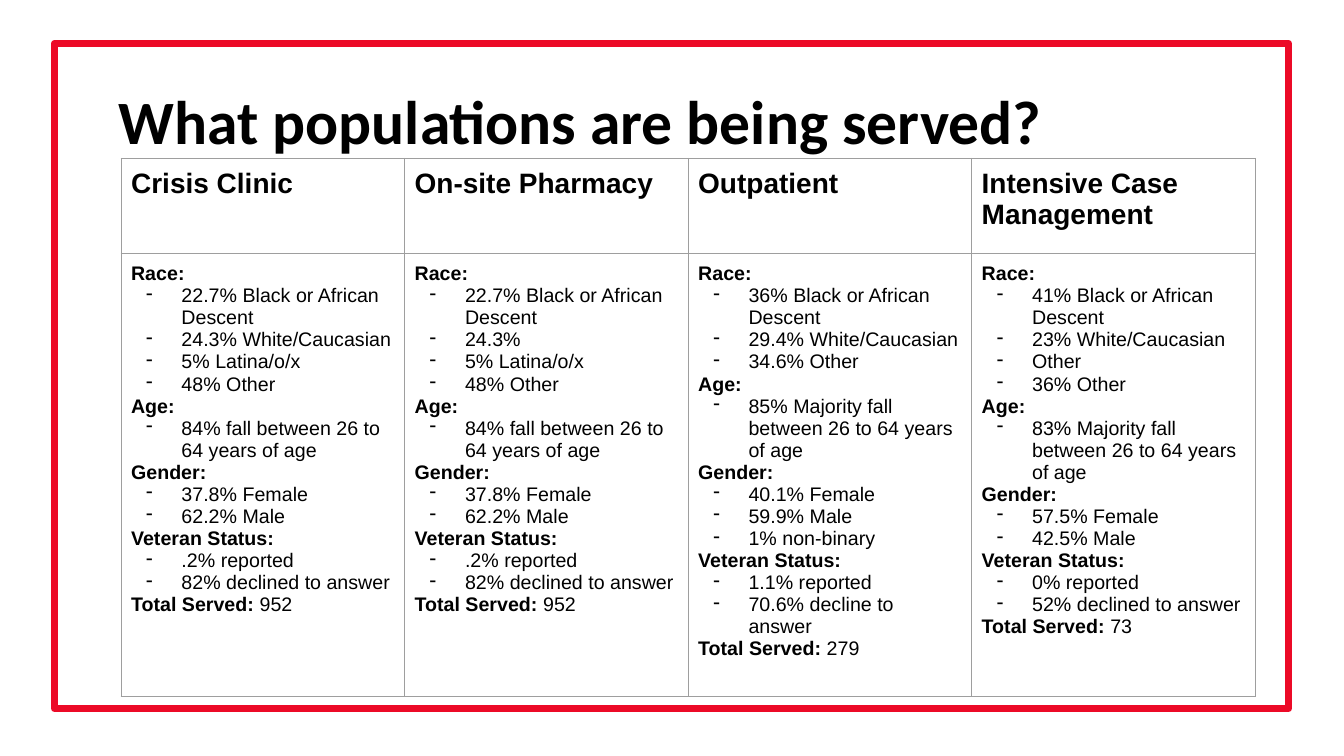
from dataclasses import dataclass

from lxml import etree
from pptx import Presentation
from pptx.dml.color import RGBColor
from pptx.enum.shapes import MSO_SHAPE
from pptx.enum.text import MSO_ANCHOR
from pptx.oxml.ns import qn
from pptx.util import Inches, Pt


@dataclass(frozen=True)
class Theme:
    text: str = "000000"
    frame: str = "EC0A27"
    grid: str = "9E9E9E"
    title_font: str = "Calibri"
    body_font: str = "Arial"
    title_size: float = 44
    header_size: float = 20
    body_size: float = 14
    frame_width: float = 5
    grid_width: float = 0.75


def clinic_facts(race, age, gender, veteran):
    return {"Race:": race, "Age:": [age], "Gender:": gender, "Veteran Status:": veteran}


def shared_facts(white_share):
    """Figures that the crisis clinic and the pharmacy have in common."""
    return clinic_facts(
        ["22.7% Black or African Descent", white_share, "5% Latina/o/x", "48% Other"],
        "84% fall between 26 to 64 years of age",
        ["37.8% Female", "62.2% Male"],
        [".2% reported", "82% declined to answer"])


PROGRAMS = [
    ("Crisis Clinic", shared_facts("24.3% White/Caucasian"), "952"),
    ("On-site Pharmacy", shared_facts("24.3%"), "952"),
    ("Outpatient", clinic_facts(
        ["36% Black or African Descent", "29.4% White/Caucasian", "34.6% Other"],
        "85% Majority fall between 26 to 64 years of age",
        ["40.1% Female", "59.9% Male", "1% non-binary"],
        ["1.1% reported", "70.6% decline to answer"]), "279"),
    ("Intensive Case Management", clinic_facts(
        ["41% Black or African Descent", "23% White/Caucasian", "Other", "36% Other"],
        "83% Majority fall between 26 to 64 years of age",
        ["57.5% Female", "42.5% Male"],
        ["0% reported", "52% declined to answer"]), "73"),
]


class SlideBuilder:
    def __init__(self, slide, theme):
        self.slide = slide
        self.theme = theme

    def style_font(self, font, name, size, bold):
        font.name = name
        font.size = Pt(size)
        font.bold = bold
        font.color.rgb = RGBColor.from_string(self.theme.text)

    def add_frame(self, left, top, width, height):
        frame = self.slide.shapes.add_shape(
            MSO_SHAPE.RECTANGLE, Inches(left), Inches(top), Inches(width), Inches(height))
        frame.shadow.inherit = False
        frame.fill.background()
        frame.line.color.rgb = RGBColor.from_string(self.theme.frame)
        frame.line.width = Pt(self.theme.frame_width)

    def add_title(self, text, left, top, width, height):
        box = self.slide.shapes.add_textbox(
            Inches(left), Inches(top), Inches(width), Inches(height))
        text_frame = box.text_frame
        text_frame.word_wrap = True
        text_frame.vertical_anchor = MSO_ANCHOR.MIDDLE
        paragraph = text_frame.paragraphs[0]
        paragraph.text = text
        paragraph.line_spacing = 0.9
        self.style_font(paragraph.font, self.theme.title_font, self.theme.title_size, True)

    def add_program_table(self, programs, left, top, width, row_heights):
        graphic = self.slide.shapes.add_table(
            len(row_heights), len(programs), Inches(left), Inches(top),
            Inches(width), Inches(sum(row_heights)))
        table = graphic.table
        table.first_row = table.horz_banding = False
        for row, height in zip(table.rows, row_heights):
            row.height = Inches(height)
        for cell in table.iter_cells():
            self.style_cell(cell)
        for column, (name, facts, total) in enumerate(programs):
            header = table.cell(0, column).text_frame.paragraphs[0]
            header.text = name
            self.style_font(header.font, self.theme.body_font, self.theme.header_size, True)
            self.fill_facts(table.cell(1, column).text_frame, facts, total)

    def style_cell(self, cell):
        cell.margin_left = cell.margin_right = Inches(0.1)
        cell.margin_top = cell.margin_bottom = Inches(0.1)
        cell.fill.background()
        properties = cell._tc.get_or_add_tcPr()
        for index, side in enumerate(("lnL", "lnR", "lnT", "lnB")):
            border = etree.Element(qn(f"a:{side}"), w=str(Pt(self.theme.grid_width)))
            fill = etree.SubElement(border, qn("a:solidFill"))
            etree.SubElement(fill, qn("a:srgbClr"), val=self.theme.grid)
            properties.insert(index, border)

    def fill_facts(self, text_frame, facts, total):
        for heading, items in facts.items():
            self.add_line(text_frame, heading, bold=True)
            for item in items:
                self.add_dash(self.add_line(text_frame, item))
        total_line = self.add_line(text_frame, "Total Served: ")
        total_line.runs[0].font.bold = True
        total_line.add_run().text = total

    def add_line(self, text_frame, text, bold=False):
        first = text_frame.paragraphs[0]
        paragraph = text_frame.add_paragraph() if first.runs else first
        paragraph.text = text
        self.style_font(paragraph.font, self.theme.body_font, self.theme.body_size, bold)
        return paragraph

    def add_dash(self, paragraph):
        properties = paragraph._p.get_or_add_pPr()
        properties.set("marL", str(Inches(0.5)))
        properties.set("indent", str(Inches(-0.35)))
        bullet = etree.Element(qn("a:buChar"), char="-")
        properties.insert(0, bullet)


def main():
    presentation = Presentation()
    presentation.slide_width = Inches(13.33)
    presentation.slide_height = Inches(7.5)
    slide = presentation.slides.add_slide(presentation.slide_layouts[6])
    builder = SlideBuilder(slide, Theme())
    builder.add_frame(0.54, 0.43, 12.24, 6.6)
    builder.add_title("What populations are being served?", 1.08, 0.51, 11.5, 1.45)
    builder.add_program_table(PROGRAMS, 1.2, 1.57, 11.25, (0.94, 4.05))
    presentation.save("out.pptx")


if __name__ == "__main__":
    main()
